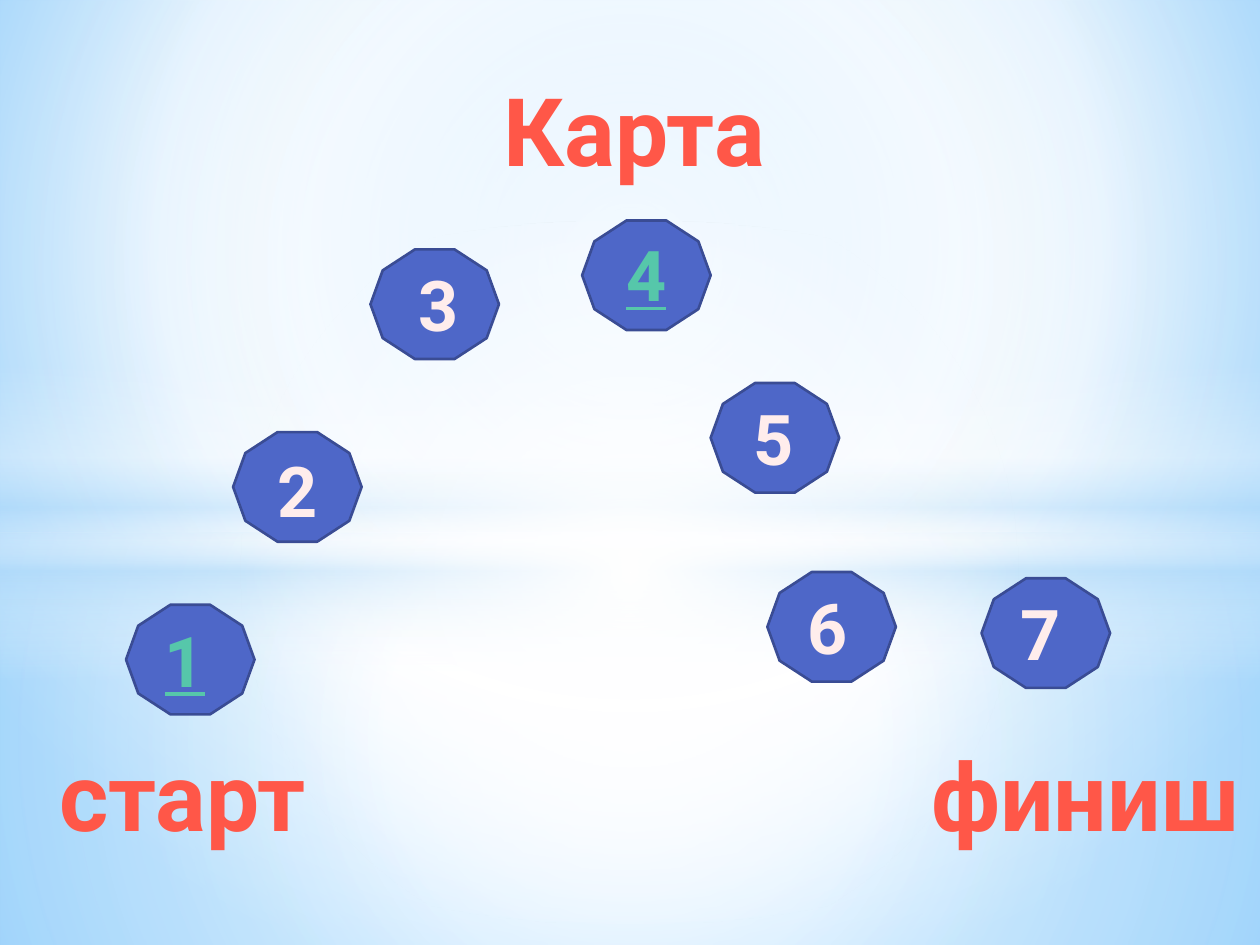
from lxml import etree
from pptx import Presentation
from pptx.dml.color import RGBColor
from pptx.enum import shapes as sh, text as tx
from pptx.oxml.ns import qn
from pptx.util import Inches, Pt

BLUE = RGBColor(0x4E, 0x67, 0xC8)
NAVY = RGBColor(0x3A, 0x4C, 0x94)
GREEN = RGBColor(0x56, 0xC7, 0xAA)
PINK = RGBColor(0xFF, 0xED, 0xEC)
WHITE = RGBColor(0xFF, 0xFF, 0xFF)
SKY = RGBColor(0xB4, 0xDC, 0xFA)
PALE = RGBColor(0x9E, 0xD5, 0xFF)
DEEP = RGBColor(0x5B, 0xB9, 0xFF)
CORAL = RGBColor(0xFF, 0x61, 0x55)
RED = RGBColor(0xFF, 0x57, 0x48)
DARK = RGBColor(0xEF, 0x37, 0x18)
FONT = "Roboto"


def blend(fill, root, stops, to=None):
    """Fill with (percent, colour, opacity) stops: circular around the
    rectangle `to` (left, top, right, bottom percent), else downwards."""
    fill.gradient()
    grad = root.find(".//" + qn("a:gradFill"))
    for old in list(grad):
        grad.remove(old)
    rows = etree.SubElement(grad, qn("a:gsLst"))
    for pos, color, alpha in stops:
        stop = etree.SubElement(rows, qn("a:gs"), pos=str(pos * 1000))
        tone = etree.SubElement(stop, qn("a:srgbClr"), val=str(color))
        if alpha < 100:
            etree.SubElement(tone, qn("a:alpha"), val=str(alpha * 1000))
    if to:
        ring = etree.SubElement(grad, qn("a:path"), path="circle")
        sides = {side: str(val * 1000) for side, val in zip("ltrb", to)}
        etree.SubElement(ring, qn("a:fillToRect"), **sides)
    else:
        etree.SubElement(grad, qn("a:lin"), ang="5400000", scaled="0")


def write(home, words, size, x, y, w, h):
    box = home.add_textbox(Inches(x), Inches(y), Inches(w), Inches(h))
    box.text_frame.text = words
    run = box.text_frame.paragraphs[0].runs[0]
    run.font.name, run.font.size, run.font.bold = FONT, Pt(size), True
    return box.text_frame, run


prs = Presentation()
prs.slide_width, prs.slide_height = Inches(10), Inches(7.5)
slide = prs.slides.add_slide(prs.slide_layouts[6])

# Backdrop
blend(slide.background.fill, slide.element,
      [(0, PALE, 100), (60, WHITE, 100), (100, DEEP, 100)], (20, 10, 20, 60))
MID = (50, 50, 50, 50)
RECT, OVAL = sh.MSO_SHAPE.RECTANGLE, sh.MSO_SHAPE.OVAL
glows = [
    (RECT, 4.23, 3.27, [(0, WHITE, 91), (37, WHITE, 76), (100, SKY, 79)], MID),
    (RECT, 0, 4.23, [(0, WHITE, 89), (48, WHITE, 62), (100, SKY, 79)], MID),
    (RECT, 2.9, 2.5, [(0, WHITE, 0), (29, WHITE, 30), (45, SKY, 40),
                      (55, WHITE, 26), (65, SKY, 60), (100, WHITE, 0)], None),
    (OVAL, 1.75, 5.58, [(0, WHITE, 100), (54, WHITE, 0)], MID),
]
for kind, top, high, stops, to in glows:
    glow = slide.shapes.add_shape(kind, 0, Inches(top), Inches(10), Inches(high))
    glow.shadow.inherit = False
    glow.line.fill.background()
    blend(glow.fill, glow.element, stops, to)

# Numbered stops: left and top of the decagon, then of its number
stations = [
    (1, 4.8, 1.21, 4.85), (1.85, 3.43, 2.1, 3.5), (2.94, 1.98, 3.22, 2.03),
    (4.62, 1.75, 4.87, 1.79), (5.64, 3.04, 5.88, 3.09),
    (6.09, 4.54, 6.31, 4.59), (7.79, 4.59, 8, 4.64),
]
for num, (x, y, left, top) in enumerate(stations, 1):
    group = slide.shapes.add_group_shape()
    gem = group.shapes.add_shape(sh.MSO_SHAPE.DECAGON, Inches(x), Inches(y),
                                 Inches(1.02), Inches(0.87))
    gem.shadow.inherit = False
    gem.fill.solid()
    gem.fill.fore_color.rgb = BLUE
    gem.line.color.rgb = NAVY
    gem.line.width = Pt(1.5)
    frame, run = write(group.shapes, str(num), 40, left, top, 0.59, 0.77)
    frame.word_wrap = True
    marked = num in (1, 4)
    run.font.color.rgb = GREEN if marked else PINK
    if marked:
        run.font.underline = True

# Captions
heat = [(0, CORAL, 100), (25, RED, 100), (50, DARK, 100),
        (75, RED, 100), (100, CORAL, 100)]
for words, x, y, w in [("старт", 0.36, 5.8, 2.18), ("финиш", 7.23, 5.8, 2.77),
                       ("Карта", 3.88, 0.52, 2.31)]:
    frame, run = write(slide.shapes, words, 54, x, y, w, 1.01)
    frame.word_wrap = False
    frame.paragraphs[0].alignment = tx.PP_ALIGN.CENTER
    blend(run.font.fill, frame._txBody, heat)

prs.save("out.pptx")
